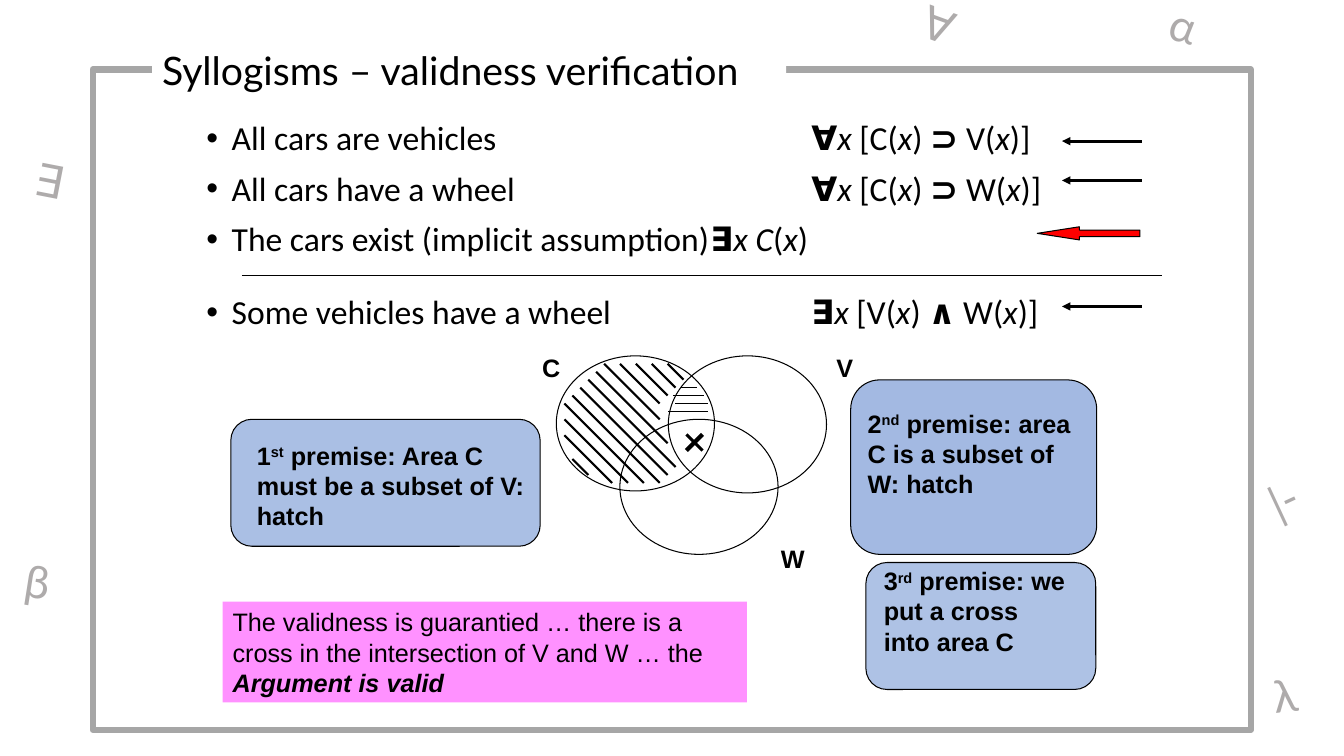
from lxml import etree
from pptx import Presentation
from pptx.dml.color import RGBColor
from pptx.enum.shapes import MSO_CONNECTOR, MSO_SHAPE
from pptx.enum.text import MSO_ANCHOR, PP_ALIGN
from pptx.oxml.ns import qn
from pptx.util import Pt

STRAIGHT = MSO_CONNECTOR.STRAIGHT
OVAL, RECT = MSO_SHAPE.OVAL, MSO_SHAPE.RECTANGLE
CARD, LEFT_ARROW = MSO_SHAPE.FLOWCHART_ALTERNATE_PROCESS, MSO_SHAPE.LEFT_ARROW
MIDDLE, LEFT = MSO_ANCHOR.MIDDLE, PP_ALIGN.LEFT

COLORS = {
    "black": "000000", "white": "FFFFFF", "blue": "4472C4", "pink": "FF00FF",
    "red": "FF0000", "frame": "A6A6A6", "symbol": "AEABAB",
}

prs = Presentation()
prs.slide_width, prs.slide_height = Pt(960), Pt(540)
slide = prs.slides.add_slide(prs.slide_layouts[6])


def write(paragraph, runs, size, font="Arial", color="black"):
    """Add (text, style) runs; style letters: b bold, i italic, ^ superscript."""
    paragraph.alignment = LEFT
    for text, style in runs:
        run = paragraph.add_run()
        run.text = text
        run.font.size, run.font.name = Pt(size), font
        run.font.bold, run.font.italic = "b" in style, "i" in style
        run.font.color.rgb = RGBColor.from_string(COLORS[color])
        if "^" in style:
            run._r.get_or_add_rPr().set("baseline", "30000")


def draw_line(x1, y1, x2, y2, width, arrow=False):
    line = slide.shapes.add_connector(STRAIGHT, Pt(x1), Pt(y1), Pt(x2), Pt(y2))
    line.line.width = Pt(width)
    line.line.color.rgb = RGBColor.from_string(COLORS["black"])
    if arrow:
        etree.SubElement(line.line._get_or_add_ln(), qn("a:tailEnd"), type="triangle")
    etree.SubElement(line._element.spPr, qn("a:effectLst"))


# Shapes: preset, box, fill, opacity in percent, line colour, line width
outlines = {
    "C": (OVAL, (397.4, 254.2, 113, 96.5), None, 100, "black", 0.75),
    "V": (OVAL, (477.4, 254.2, 113, 97.9), None, 100, "black", 0.75),
    "W": (OVAL, (442.8, 299.5, 113, 96.5), None, 100, "black", 0.75),
    "premise 1": (CARD, (164.9, 299.5, 221, 90.7), "blue", 45, "black", 0.75),
    "premise 2": (CARD, (607.7, 271.4, 175.7, 124.6), "blue", 49, "black", 0.75),
    "premise 3": (CARD, (618.5, 401.8, 164.2, 90.7), "blue", 43, "black", 0.75),
    "verdict": (RECT, (159.1, 429.8, 374.4, 72), "pink", 43, None, 0),
    "implicit": (LEFT_ARROW, (740.9, 162, 73.4, 9.4), "red", 100, "black", 0.75),
    "frame": (RECT, (66.2, 49.7, 827.3, 471.6), None, 100, "frame", 4.5),
    "title": (RECT, (108.7, 21.6, 452.9, 56.9), "white", 100, None, 0),
}
drawn = {}
for name, (preset, box, fill, opacity, edge, width) in outlines.items():
    shape = slide.shapes.add_shape(preset, *map(Pt, box))
    shape.shadow.inherit = False
    if fill:
        shape.fill.solid()
        shape.fill.fore_color.rgb = RGBColor.from_string(COLORS[fill])
        if opacity < 100:
            tint = shape._element.spPr.find(".//" + qn("a:srgbClr"))
            etree.SubElement(tint, qn("a:alpha"), val=str(opacity * 1000))
    else:
        shape.fill.background()
    if edge:
        shape.line.color.rgb = RGBColor.from_string(COLORS[edge])
        shape.line.width = Pt(width)
    else:
        shape.line.fill.background()
    shape.text_frame.word_wrap = True
    drawn[name] = shape
drawn["implicit"].adjustments[1] = 3.207

# Title and verdict
title = drawn["title"].text_frame
title.vertical_anchor = MIDDLE
write(title.paragraphs[0], [("Syllogisms – validness verification", "")], 28, "Lato")

verdict = drawn["verdict"].text_frame
verdict.vertical_anchor = MSO_ANCHOR.TOP
conclusion = verdict.paragraphs[0]
write(conclusion, [("The validness is guarantied … there is a cross in the "
                    "intersection of V and W … the", "")], 18)
conclusion.add_line_break()
write(conclusion, [("Argument is valid", "bi")], 18)

# Statements with their formulas: text, tab stop, space before, formula
statements = [
    ("All cars are vehicles", 432, 10,
     [("∀", "b"), ("x ", "i"), ("[C(", ""), ("x", "i"), (") ", ""), ("⊃ ", "b"),
      ("V(", ""), ("x", "i"), (")]", "")]),
    ("All cars have a wheel", 432, 10,
     [("∀", "b"), ("x ", "i"), ("[C(", ""), ("x", "i"), (") ", ""), ("⊃ ", "b"),
      ("W(", ""), ("x", "i"), (")]", "")]),
    ("The cars exist (implicit assumption)", 360, 10,
     [("∃", "b"), ("x C", "i"), ("(", ""), ("x", "i"), (")", "")]),
    ("Some vehicles have a wheel", 432, 26.4,
     [("∃", "b"), ("x ", "i"), ("[V(", ""), ("x", "i"), (") ", ""), ("∧", "b"),
      (" W(", ""), ("x", "i"), (")]", "")]),
]
syllogism = slide.shapes.add_textbox(Pt(140.4), Pt(83.5), Pt(691.9), Pt(175.7)).text_frame
syllogism.word_wrap = True
for i, (sentence, stop, before, formula) in enumerate(statements):
    statement = syllogism.add_paragraph() if i else syllogism.paragraphs[0]
    write(statement, [(sentence + "\t", "")] + formula, 24, "Calibri")
    statement.line_spacing, statement.space_before = 0.9, Pt(before)
    layout = statement._p.get_or_add_pPr()
    layout.set("marL", str(Pt(18)))
    layout.set("indent", str(-Pt(18)))
    etree.SubElement(layout, qn("a:buFont"), typeface="Arial")
    etree.SubElement(layout, qn("a:buChar"), char="•")
    tabs = etree.SubElement(layout, qn("a:tabLst"))
    etree.SubElement(tabs, qn("a:tab"), pos=str(Pt(stop)), algn="l")

# Inference line and arrows at the formulas
draw_line(172.8, 196.6, 830.2, 196.6, 0.75)
for y in (100.8, 128.9, 218.9):
    draw_line(815.5, y, 758.6, y, 2, arrow=True)

# Diagonal hatch of C outside V: column, row and length in grid steps
STEP, HATCH_X, HATCH_Y = 5.67, 403.2, 259.9
diagonals = [(13, 0, 2), (11, 0, 3), (9, 0, 4), (7, 0, 5), (5, 0, 7), (4, 1, 9),
             (3, 2, 11), (2, 3, 11), (1, 4, 11), (0, 5, 10), (0, 7, 8), (0, 9, 6),
             (1, 12, 2)]
for column, row, length in diagonals:
    x, y = HATCH_X + column * STEP, HATCH_Y + row * STEP
    draw_line(x, y, x + length * STEP, y + length * STEP, 1.5)

# Horizontal hatch of C and V outside W
spans = [(486.7, 498.2), (481, 502.6), (482.4, 505.4), (477.4, 505.4)]
for row, (start, end) in enumerate(spans, 3):
    draw_line(start, HATCH_Y + row * STEP, end, HATCH_Y + row * STEP, 0.75)

# Cross in the common area
draw_line(490.3, 310.3, 501.8, 321.8, 2.25)
draw_line(501.8, 310.3, 490.3, 321.8, 3)

# Circle labels, premises and scattered symbols: box, rotation, runs
notes = [
    ((375.1, 248.4, 33.8, 28.8), 0, [(" C", "b")]),
    ((590.4, 248.4, 45.4, 28.8), 0, [("V", "b")]),
    ((550.8, 384.5, 33.8, 28.8), 0, [("W", "b")]),
    ((176.4, 311, 215.3, 72), 0,
     [("1", "b"), ("st", "b^"), (" premise: Area C must be a subset of V: hatch", "b")]),
    ((612.7, 288, 164.2, 72), 0,
     [("2", "b"), ("nd", "b^"), (" premise: area C is a subset of W: hatch", "b")]),
    ((624.2, 400.3, 147.6, 72), 0,
     [("3", "b"), ("rd", "b^"), (" premise: we put a cross into area C", "b")]),
]
symbols = [
    ((652.3, -4.3, 43.2, 46.1), 20, [("∀", "")]),
    ((18, 106.6, 45.4, 46.1), 11, [("∃", "")]),
    ((828.7, -2.9, 45.4, 46.1), 16, [("α", "")]),
    ((10.8, 393.1, 41.8, 46.1), 9, [("β", "")]),
    ((894.2, 473, 58.3, 46.1), 354, [(" λ", "")]),
    ((899.3, 330.5, 49, 46.1), 335, [("|-", "")]),
]
for entries, style in ((notes, (18,)), (symbols, (32, "Lato", "symbol"))):
    for box, rotation, runs in entries:
        label = slide.shapes.add_textbox(*map(Pt, box))
        label.rotation = rotation
        label.text_frame.word_wrap = True
        write(label.text_frame.paragraphs[0], runs, *style)

prs.save("out.pptx")
